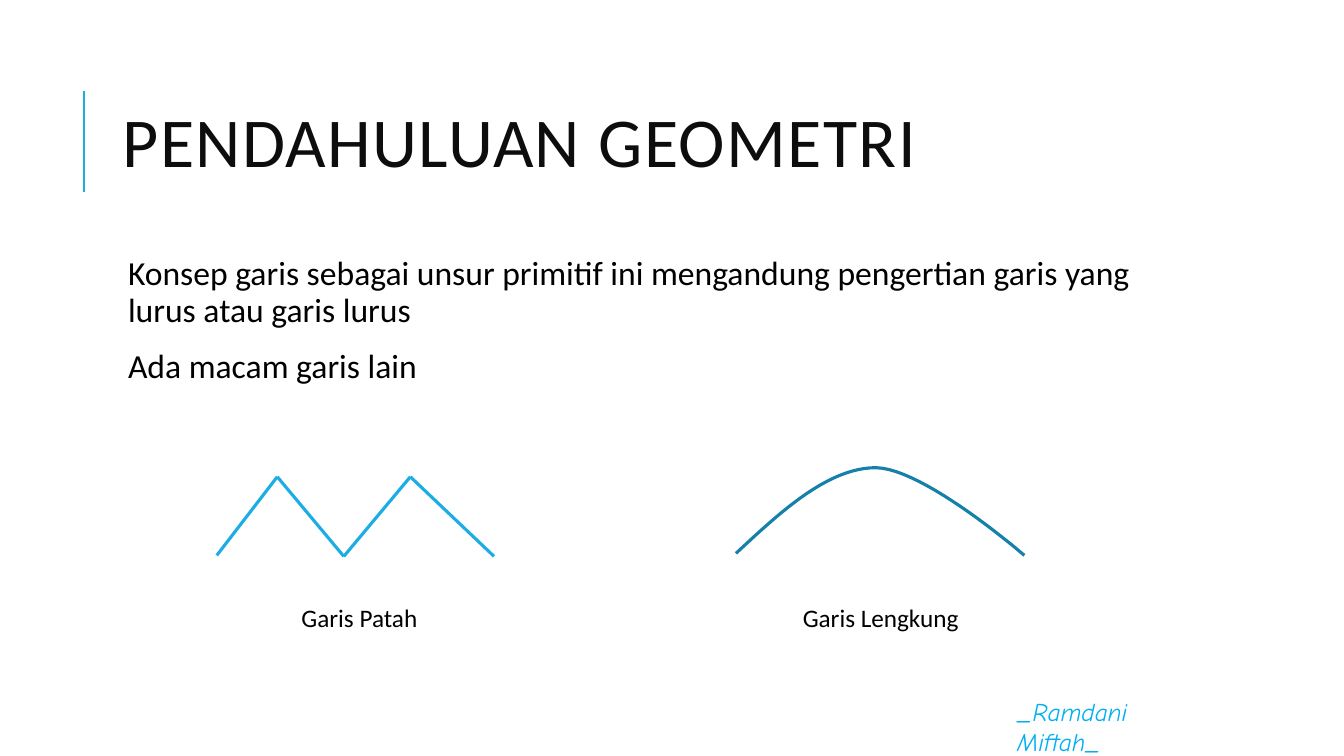
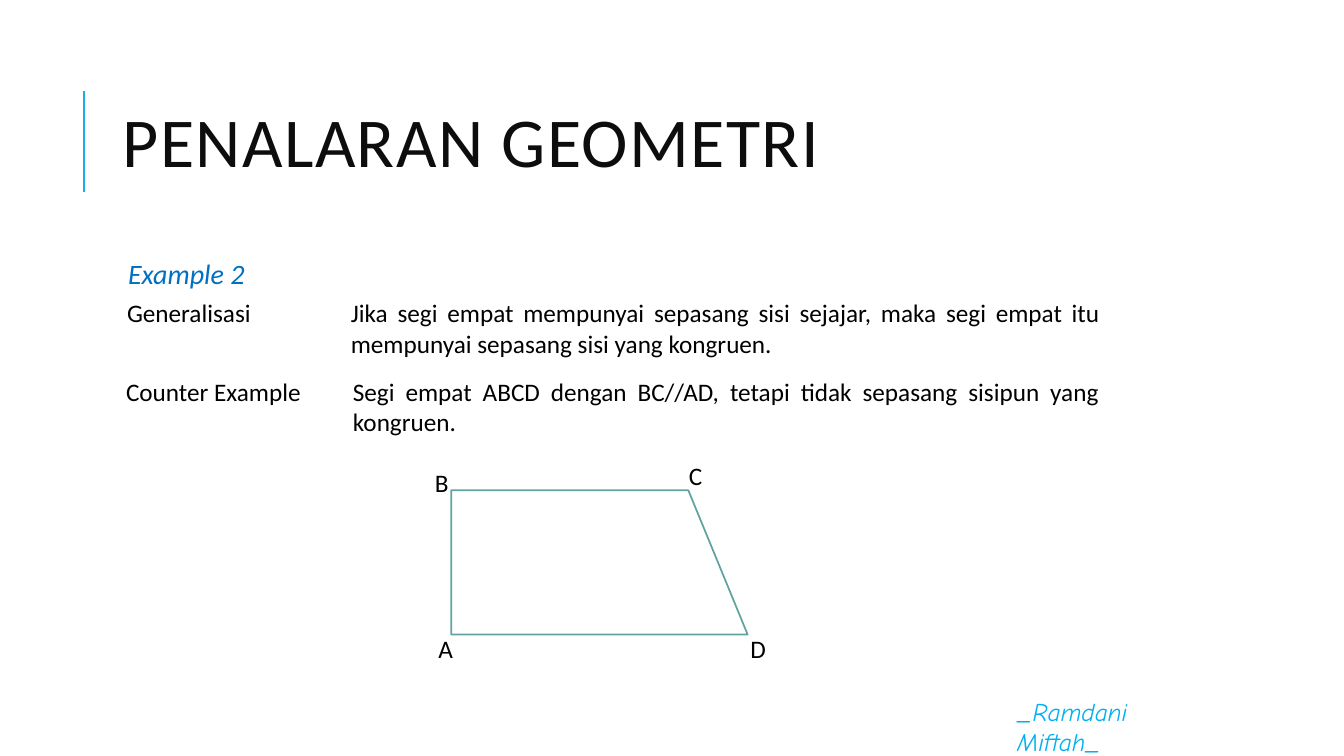
"""Build two geometry slides: kinds of lines, and a counterexample with a trapezoid."""
from dataclasses import dataclass
from itertools import pairwise

from lxml import etree
from pptx import Presentation
from pptx.dml.color import RGBColor
from pptx.enum.shapes import MSO_CONNECTOR, MSO_SHAPE
from pptx.enum.text import MSO_ANCHOR, PP_ALIGN
from pptx.oxml.ns import qn
from pptx.util import Inches, Pt


@dataclass(frozen=True)
class Theme:
    font: str = "Calibri"
    footer_font: str = "Comic Neue"
    accent: str = "1CADE4"
    curve: str = "1580A9"
    outline: str = "62A39F"
    paper: str = "FFFFFF"
    title: str = "0D0D0D"
    text: str = "000000"
    example: str = "0070C0"
    footer: str = "00B0F0"
    title_size: int = 50
    body_size: int = 24
    example_size: int = 20
    small_size: int = 18


T = Theme()
FOOTER = "_Ramdani Miftah_"
BODY_BOX = (1.12, 2.5, 10.63, 4.4)
BODY_INSETS = (0.15, 0.05, 0.05, 0.05)

LINES_TITLE = "PENDAHULUAN GEOMETRI"
LINES_BODY = [
    "Konsep garis sebagai unsur primitif ini mengandung pengertian garis yang lurus atau garis lurus",
    "Ada macam garis lain",
]
ZIGZAG = [(2.15, 5.51), (2.75, 4.73), (3.41, 5.52), (4.07, 4.73), (4.9, 5.52)]
ARCS = [
    [(7.3, 5.49), (7.76, 5.06), (8.22, 4.64), (8.69, 4.64)],
    [(8.69, 4.64), (9.17, 4.65), (10.16, 5.51), (10.16, 5.51)],
]
CAPTIONS = [("Garis Patah", 2.58), ("Garis Lengkung", 7.75)]

PROOF_TITLE = "PENALARAN GEOMETRI"
PROOF_BODY = ["Example 2"]
STATEMENTS = [
    ("Generalisasi",
     "Jika segi empat mempunyai sepasang sisi sejajar, maka segi empat itu mempunyai sepasang sisi yang kongruen.",
     1.16, 2.91, (2.22, 7.63)),
    ("Counter Example",
     "Segi empat ABCD dengan BC//AD, tetapi tidak sepasang sisipun yang kongruen.",
     1.15, 3.69, (2.25, 7.6)),
]
VERTICES = [("A", 4.21, 6.26), ("C", 6.69, 4.55), ("B", 4.17, 4.62), ("D", 7.31, 6.26)]


def rgb(color):
    return RGBColor.from_string(color)


def add_run(p, text, size=T.small_size, color=T.text, font=T.font, italic=False):
    r = p.add_run()
    r.text = text
    r.font.name, r.font.size, r.font.italic = font, Pt(size), italic
    r.font.color.rgb = rgb(color)
    return r


def add_text(s, box, paragraphs, anchor=MSO_ANCHOR.MIDDLE, align=PP_ALIGN.LEFT,
             insets=(0.1, 0.05, 0.1, 0.05), spacing=None, before=0, after=0, **style):
    tf = s.shapes.add_textbox(*map(Inches, box)).text_frame
    tf.word_wrap, tf.vertical_anchor = True, anchor
    tf.margin_left, tf.margin_top, tf.margin_right, tf.margin_bottom = map(Inches, insets)
    for i, text in enumerate(paragraphs):
        p = tf.add_paragraph() if i else tf.paragraphs[0]
        p.alignment, p.line_spacing = align, spacing
        p.space_before, p.space_after = Pt(before), Pt(after)
        add_run(p, text, **style)
    return tf


def add_line(s, start, end, color, width):
    line = s.shapes.add_connector(MSO_CONNECTOR.STRAIGHT, *map(Inches, (*start, *end)))
    line.line.color.rgb, line.line.width = rgb(color), Pt(width)
    etree.SubElement(line._element.spPr, qn("a:effectLst"))


def bezier(points, t):
    weights = ((1 - t) ** 3, 3 * t * (1 - t) ** 2, 3 * t * t * (1 - t), t ** 3)
    return tuple(Inches(sum(w * p[axis] for w, p in zip(weights, points))) for axis in (0, 1))


def add_curve(s, arcs, color, width, steps=24):
    points = [bezier(arc, i / steps) for arc in arcs for i in range(steps + 1)]
    builder = s.shapes.build_freeform(*points[0], scale=1.0)
    builder.add_line_segments(points[1:], close=False)
    curve = builder.convert_to_shape()
    curve.shadow.inherit = False
    curve.fill.background()
    curve.line.color.rgb, curve.line.width = rgb(color), Pt(width)


def add_statement(s, label, statement, left, top, widths):
    box = (left, top, sum(widths), 0.7)
    table = s.shapes.add_table(1, 2, *map(Inches, box)).table
    table.first_row = table.horz_banding = False
    columns = zip((label, statement), widths, (PP_ALIGN.LEFT, PP_ALIGN.JUSTIFY))
    for i, (text, width, align) in enumerate(columns):
        table.columns[i].width = Inches(width)
        cell = table.cell(0, i)
        cell.fill.background()
        p = cell.text_frame.paragraphs[0]
        p.alignment = align
        add_run(p, text)


def add_trapezoid(s):
    box = (5.23, 4.11, 1.43, 2.94)
    sp = s.shapes.add_shape(MSO_SHAPE.FLOWCHART_MANUAL_INPUT, *map(Inches, box))
    sp.rotation = 90
    sp.shadow.inherit = False
    sp.fill.solid()
    sp.fill.fore_color.rgb = rgb(T.paper)
    sp.line.color.rgb, sp.line.width = rgb(T.outline), Pt(1.25)


def new_slide(prs, title):
    s = prs.slides.add_slide(prs.slide_layouts[6])
    add_line(s, (0.83, 1.9), (0.83, 0.9), T.accent, 1.5)
    add_text(s, (9.99, 7.03, 1.9, 0.35), [FOOTER], color=T.footer, font=T.footer_font, italic=True)
    tf = add_text(s, (1.12, 0.64, 10.63, 1.64), [title], spacing=0.8, size=T.title_size, color=T.title)
    tf.paragraphs[0].runs[0].font._element.set("spc", "100")
    return s


def lines_slide(prs):
    s = new_slide(prs, LINES_TITLE)
    add_text(s, BODY_BOX, LINES_BODY, MSO_ANCHOR.TOP, insets=BODY_INSETS,
             spacing=0.9, before=12, after=2, size=T.body_size)
    for start, end in pairwise(ZIGZAG):
        add_line(s, start, end, T.accent, 2.25)
    add_curve(s, ARCS, T.curve, 2.25)
    for caption, left in CAPTIONS:
        add_text(s, (left, 5.9, 1.97, 0.46), [caption], align=PP_ALIGN.CENTER)


def proof_slide(prs):
    s = new_slide(prs, PROOF_TITLE)
    add_text(s, BODY_BOX, PROOF_BODY, MSO_ANCHOR.TOP, insets=BODY_INSETS,
             size=T.example_size, color=T.example, italic=True)
    for statement in STATEMENTS:
        add_statement(s, *statement)
    add_trapezoid(s)
    for name, left, top in VERTICES:
        add_text(s, (left, top, 0.42, 0.34), [name], align=PP_ALIGN.CENTER)


def main():
    prs = Presentation()
    prs.slide_width, prs.slide_height = Inches(13.33), Inches(7.5)
    lines_slide(prs)
    proof_slide(prs)
    prs.save("out.pptx")


if __name__ == "__main__":
    main()
